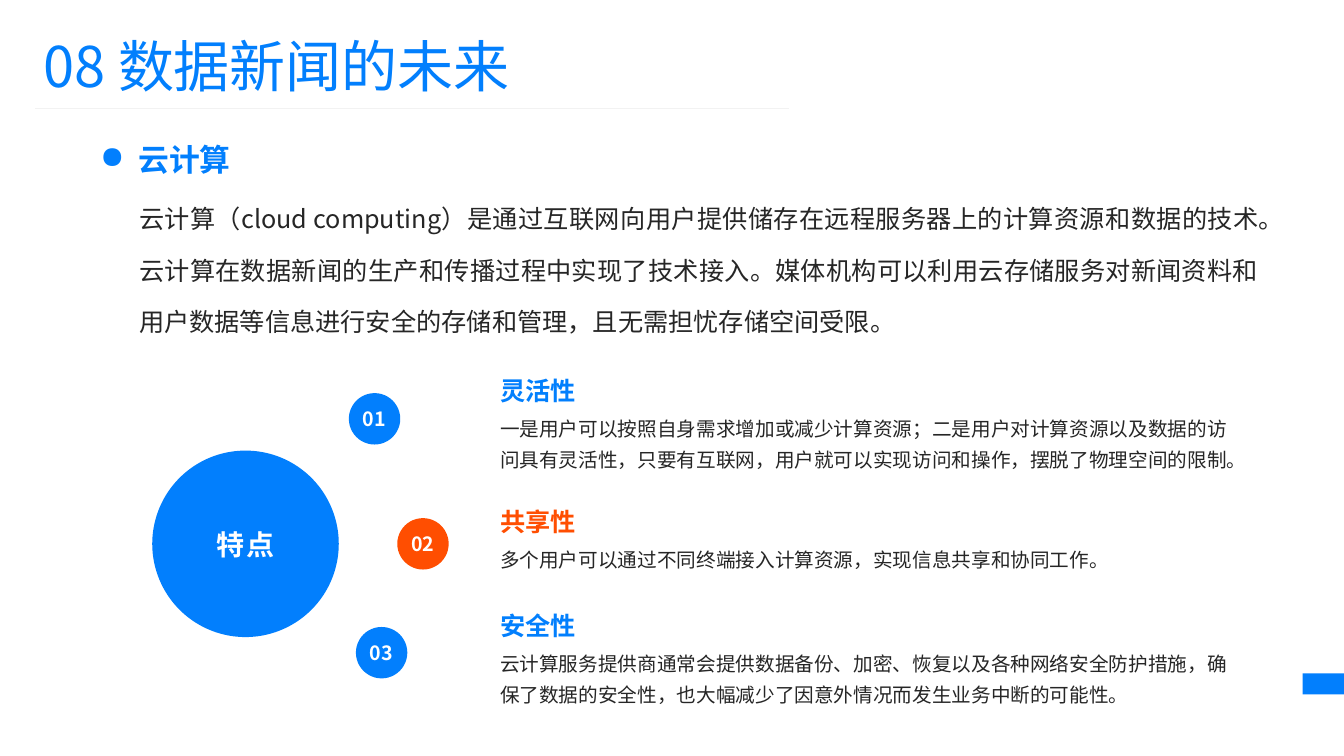
from dataclasses import dataclass

from pptx import Presentation
from pptx.dml.color import RGBColor
from pptx.enum.shapes import MSO_CONNECTOR as Connector, MSO_SHAPE as Shape
from pptx.enum.text import MSO_ANCHOR as Anchor, MSO_AUTO_SIZE as AutoSize, PP_ALIGN as Align
from pptx.oxml.ns import qn
from pptx.util import Inches, Pt


@dataclass(frozen=True)
class Theme:
    font: str = "Noto Sans CJK SC"
    blue: str = "027FFD"
    orange: str = "FF4E01"
    ink: str = "262626"
    white: str = "FFFFFF"
    rule: str = "F2F2F2"
    title: int = 40
    heading: int = 22
    hub: int = 20
    body: int = 18
    detail: int = 14


class SlideBuilder:
    def __init__(self, slide, theme):
        self.slide = slide
        self.theme = theme

    def add_words(self, frame, text, size, color, bold=False, align=Align.LEFT,
                  spacing=None, tracking=None):
        """Put one run into the frame's first paragraph and return the paragraph."""
        paragraph = frame.paragraphs[0]
        paragraph.alignment = align
        if spacing:
            paragraph.line_spacing = spacing
        run = paragraph.add_run()
        run.text = text
        font = run.font
        font.size, font.bold, font.name = Pt(size), bold, self.theme.font
        font.color.rgb = RGBColor.from_string(color)
        properties = run._r.get_or_add_rPr()
        properties.find(qn("a:latin")).addnext(
            properties.makeelement(qn("a:ea"), {"typeface": self.theme.font}))
        if tracking:
            properties.set("spc", str(int(tracking * 100)))
        return paragraph

    def title(self, text, left, top, width, height):
        title = self.slide.shapes.title
        title.left, title.top = Inches(left), Inches(top)
        title.width, title.height = Inches(width), Inches(height)
        frame = title.text_frame
        frame.auto_size = AutoSize.NONE
        frame.vertical_anchor = Anchor.TOP
        self.add_words(frame, text, self.theme.title, self.theme.blue)

    def text(self, text, left, top, width, height, size, color,
             anchor=Anchor.TOP, bottom=0, **style):
        box = self.slide.shapes.add_textbox(
            Inches(left), Inches(top), Inches(width), Inches(height))
        frame = box.text_frame
        frame.word_wrap = True
        frame.vertical_anchor = anchor
        frame.margin_left = frame.margin_right = frame.margin_top = 0
        frame.margin_bottom = Inches(bottom)
        return self.add_words(frame, text, size, color, **style)

    def bullet(self, paragraph, indent, symbol="●"):
        properties = paragraph._p.get_or_add_pPr()
        properties.set("marL", str(Inches(indent)))
        properties.set("indent", str(-Inches(indent)))
        properties.append(properties.makeelement(qn("a:buChar"), {"char": symbol}))

    def block(self, kind, left, top, width, height, color):
        block = self.slide.shapes.add_shape(
            kind, Inches(left), Inches(top), Inches(width), Inches(height))
        block.shadow.inherit = False
        block.fill.solid()
        block.fill.fore_color.rgb = RGBColor.from_string(color)
        block.line.fill.background()
        return block

    def disc(self, text, left, top, diameter, color, size, tracking=None):
        frame = self.block(Shape.OVAL, left, top, diameter, diameter, color).text_frame
        frame.word_wrap = False
        frame.vertical_anchor = Anchor.MIDDLE
        frame.margin_left = frame.margin_right = frame.margin_top = frame.margin_bottom = 0
        self.add_words(frame, text, size, self.theme.white, True, Align.CENTER,
                       tracking=tracking)

    def rule(self, left, right, y):
        rule = self.slide.shapes.add_connector(
            Connector.STRAIGHT, Inches(left), Inches(y), Inches(right), Inches(y))
        rule.line.color.rgb = RGBColor.from_string(self.theme.rule)
        rule.line.width = Pt(0.5)
        properties = rule._element.spPr
        properties.append(properties.makeelement(qn("a:effectLst"), {}))

    def feature(self, number, name, detail, top, disc_left, disc_top, color):
        """Add a numbered disc with its heading and explanation."""
        left, heading_height = 4.96, 0.5
        self.disc(number, disc_left, disc_top, 0.51, color, self.theme.detail)
        self.text(name, left, top, 5.29, heading_height, self.theme.body, color,
                  anchor=Anchor.BOTTOM, bottom=0.04, bold=True)
        self.text(detail, left, top + heading_height + 0.01, 7.3, 0.6,
                  self.theme.detail, self.theme.ink, spacing=1.3)


def main():
    theme = Theme()
    presentation = Presentation()
    presentation.slide_width, presentation.slide_height = Inches(13.33), Inches(7.5)
    slide = presentation.slides.add_slide(presentation.slide_layouts[5])
    builder = SlideBuilder(slide, theme)

    builder.block(Shape.RECTANGLE, 12.92, 6.68, 0.41, 0.21, theme.blue)
    builder.title("08 数据新闻的未来", 0.33, 0.26, 7.68, 0.77)
    builder.rule(0.35, 7.83, 1.08)

    topic = builder.text("云计算", 0.55, 1.33, 2.18, 0.43, theme.heading, theme.blue,
                         anchor=Anchor.BOTTOM, bold=True, align=Align.CENTER)
    builder.bullet(topic, 0.38)
    builder.text(
        "云计算（cloud computing）是通过互联网向用户提供储存在远程服务器上的计算资源和数据的技术。"
        "云计算在数据新闻的生产和传播过程中实现了技术接入。"
        "媒体机构可以利用云存储服务对新闻资料和用户数据等信息进行安全的存储和管理，"
        "且无需担忧存储空间受限。",
        1.38, 1.81, 11.11, 1.25, theme.body, theme.ink, align=Align.JUSTIFY, spacing=1.7)

    builder.disc("特点", 1.51, 4.47, 1.85, theme.blue, theme.hub, tracking=1.5)
    features = [
        ("01", "灵活性",
         "一是用户可以按照自身需求增加或减少计算资源；二是用户对计算资源以及数据的访问具有灵活性，"
         "只要有互联网，用户就可以实现访问和操作，摆脱了物理空间的限制。",
         3.56, 3.46, 3.9, theme.blue),
        ("02", "共享性",
         "多个用户可以通过不同终端接入计算资源，实现信息共享和协同工作。",
         4.86, 3.94, 5.14, theme.orange),
        ("03", "安全性",
         "云计算服务提供商通常会提供数据备份、加密、恢复以及各种网络安全防护措施，"
         "确保了数据的安全性，也大幅减少了因意外情况而发生业务中断的可能性。",
         5.89, 3.53, 6.22, theme.blue),
    ]
    for feature in features:
        builder.feature(*feature)

    presentation.save("out.pptx")


if __name__ == "__main__":
    main()
